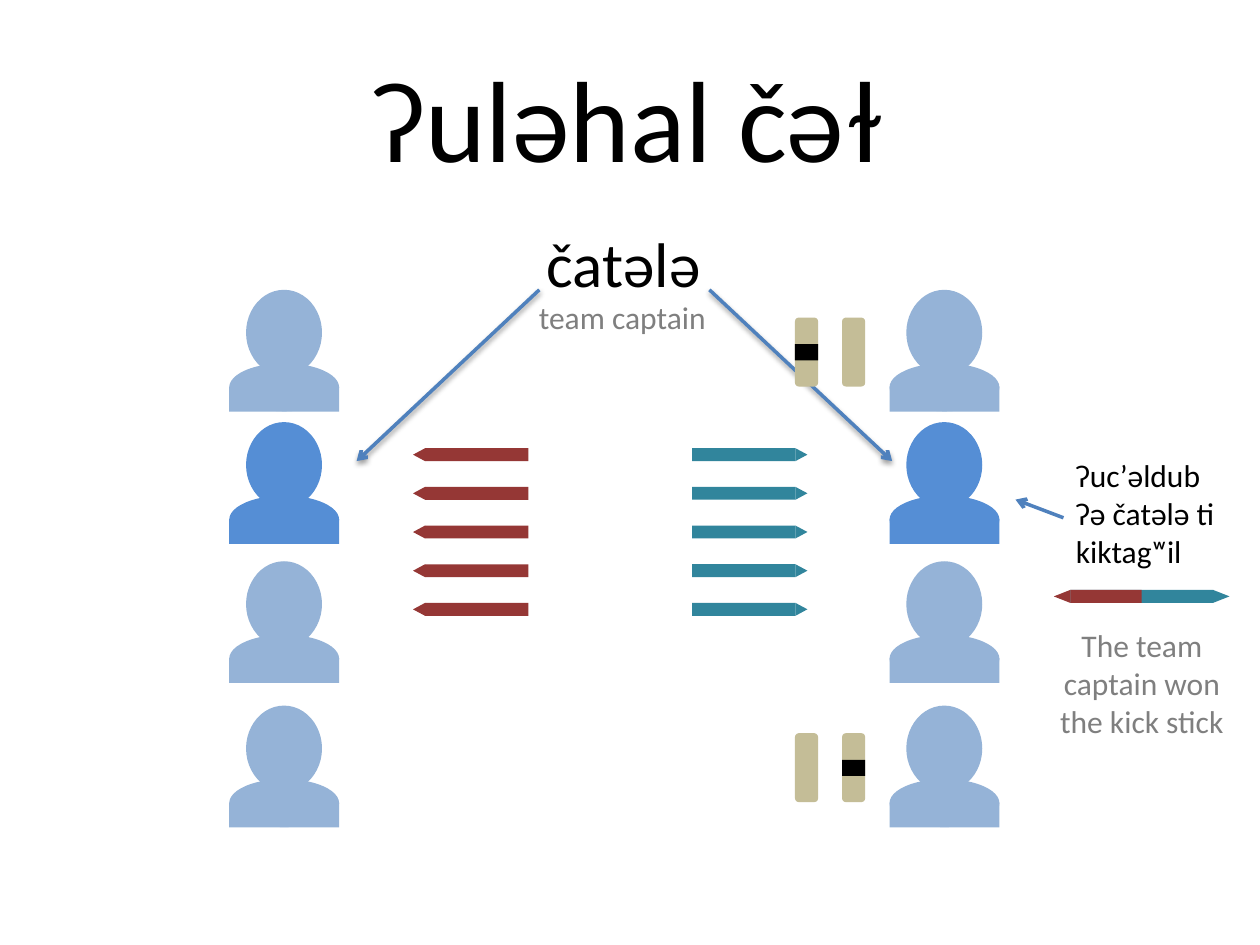
from lxml import etree
from pptx import Presentation
from pptx.dml.color import RGBColor
from pptx.enum.shapes import MSO_CONNECTOR, MSO_SHAPE
from pptx.enum.text import MSO_ANCHOR, PP_ALIGN
from pptx.oxml.ns import qn
from pptx.util import Pt

OVAL, RECT = MSO_SHAPE.OVAL, MSO_SHAPE.RECTANGLE
TRIANGLE, ROUNDED = MSO_SHAPE.ISOSCELES_TRIANGLE, MSO_SHAPE.ROUNDED_RECTANGLE
STRAIGHT = MSO_CONNECTOR.STRAIGHT
LEFT, CENTER = PP_ALIGN.LEFT, PP_ALIGN.CENTER
FONT = "Calibri"
TITLE_ONLY = 5

COLORS = {
    "player": "95B3D7", "captain": "558ED5", "arrow": "4F81BD",
    "red": "953735", "teal": "31859C", "bone": "C4BD97",
    "black": "000000", "gray": "7F7F7F",
}

# Content: lengths in points
TITLE = "ʔuləhal čəɫ"
CAPTAIN = "čatələ"
CAPTAIN_ENGLISH = "team captain"
WON = ["ʔuc’əldub", "ʔə čatələ ti", "kiktagʷil"]
WON_ENGLISH = "The team captain won the kick stick"

TEAM_LEFTS = [131, 508.3]
PLAYERS = [(165.6, "player"), (241.2, "captain"), (320.7, "player"), (403.2, "player")]
PLAYER_PARTS = [  # kind, offset from player corner, size
    (OVAL, 9.6, 0, 43.4, 49),
    (OVAL, 0, 42, 62.8, 27.4),
    (RECT, 0, 55.4, 62.8, 14.2),
]
STICK_COUNT, STICK_TOP, STICK_PITCH = 5, 256.1, 22.1
STICK_HEIGHT, STICK_LENGTH, STICK_TIP = 7.4, 59.1, 6.9
STICK_LEFTS = [("red", 242.9, 270), ("teal", 395.4, 90)]
BONE_LEFTS, BONE_WIDTH, BONE_HEIGHT = [454.3, 481.2], 13.2, 39.4
BAND_OFFSET, BAND_HEIGHT = 15.2, 9.2
BONE_PAIRS = [(419, 1), (181.5, 0)]  # top, index of the banded bone


def color(name):
    return RGBColor.from_string(COLORS[name])


def add_part(shapes, kind, left, top, width, height, fill, turn=0):
    """Add a filled shape whose drawn extent is the box given, even when turned."""
    if turn:
        left, top = left + (width - height) / 2, top + (height - width) / 2
        width, height = height, width
    part = shapes.add_shape(kind, Pt(left), Pt(top), Pt(width), Pt(height))
    part.rotation = turn
    part.shadow.inherit = False
    part.fill.solid()
    part.fill.fore_color.rgb = color(fill)
    part.line.fill.background()
    return part


def write(frame, lines, size=18, fill="black", align=LEFT, wrap=True):
    frame.word_wrap = wrap
    for number, line in enumerate(lines):
        para = frame.paragraphs[0] if number == 0 else frame.add_paragraph()
        para.alignment = align
        span = para.add_run()
        span.text = line
        span.font.name = FONT
        span.font.size = Pt(size)
        span.font.color.rgb = color(fill)


def add_text(shapes, left, top, width, height, lines, **style):
    box = shapes.add_textbox(Pt(left), Pt(top), Pt(width), Pt(height))
    write(box.text_frame, lines, **style)


def add_arrow(shapes, start, end, shadow=False):
    arrow = shapes.add_connector(STRAIGHT, *map(Pt, start + end))
    arrow.line.color.rgb = color("arrow")
    arrow.line.width = Pt(2)
    etree.SubElement(arrow.line._get_or_add_ln(), qn("a:tailEnd"), type="arrow")
    effects = etree.SubElement(arrow._element.spPr, qn("a:effectLst"))
    if shadow:
        outer = etree.SubElement(effects, qn("a:outerShdw"), blurRad=str(Pt(3.1)),
                                 dist=str(Pt(1.6)), dir="5400000", rotWithShape="0")
        shade = etree.SubElement(outer, qn("a:srgbClr"), val=COLORS["black"])
        etree.SubElement(shade, qn("a:alpha"), val="38000")


def add_group(page):
    return page.shapes.add_group_shape().shapes


def add_player(page, left, top, fill):
    group = add_group(page)
    for kind, across, down, width, height in PLAYER_PARTS:
        add_part(group, kind, left + across, top + down, width, height, fill)


def add_stick(page, left, top, fill, turn):
    group = add_group(page)
    tip_left = left + STICK_LENGTH if turn == 90 else left - STICK_TIP
    add_part(group, RECT, left, top, STICK_LENGTH, STICK_HEIGHT, fill, turn)
    add_part(group, TRIANGLE, tip_left, top, STICK_TIP, STICK_HEIGHT, fill, turn)


def add_kick_stick(page, left=611.6, top=337.1, length=81.6, tip=9.4):
    group = add_group(page)
    add_part(group, RECT, left, top, length, STICK_HEIGHT, "teal", 90)
    add_part(group, TRIANGLE, left + length, top, tip, STICK_HEIGHT, "teal", 90)
    add_part(group, TRIANGLE, left - tip, top, tip, STICK_HEIGHT, "red", 270)
    add_part(group, RECT, left, top, length / 2, STICK_HEIGHT, "red", 90)


def add_bones(page, top, banded):
    group = add_group(page)
    for left in BONE_LEFTS:
        add_part(group, ROUNDED, left, top, BONE_WIDTH, BONE_HEIGHT, "bone")
    add_part(group, RECT, BONE_LEFTS[banded], top + BAND_OFFSET,
             BONE_WIDTH, BAND_HEIGHT, "black")


def main():
    deck = Presentation()
    deck.slide_width, deck.slide_height = Pt(720), Pt(540)
    page = deck.slides.add_slide(deck.slide_layouts[TITLE_ONLY])

    # Title
    title = page.shapes.title
    title.left, title.top, title.width, title.height = map(Pt, (36, 21.6, 648, 90))
    title.text_frame.vertical_anchor = MSO_ANCHOR.MIDDLE
    write(title.text_frame, [TITLE], size=66, align=CENTER)

    # Two teams of players
    for left in TEAM_LEFTS:
        for top, fill in PLAYERS:
            add_player(page, left, top, fill)

    # Who won the kick stick
    group = add_group(page)
    add_text(group, 607.7, 257, 95, 72.7, WON, wrap=False)
    add_arrow(group, (607.7, 295.9), (580.3, 285.5))

    # Counting sticks and the kick stick
    for fill, left, turn in STICK_LEFTS:
        for row in range(STICK_COUNT):
            add_stick(page, left, STICK_TOP + row * STICK_PITCH, fill, turn)
    add_kick_stick(page)

    # Captain label pointing at both captains
    group = add_group(page)
    add_text(group, 305.3, 124.6, 103.7, 51, [CAPTAIN], size=36, wrap=False)
    add_arrow(group, (308.2, 165.6), (203.8, 263.5), shadow=True)
    add_arrow(group, (405.4, 165.6), (509.8, 263.5), shadow=True)

    # Bones and English captions
    for top, banded in BONE_PAIRS:
        add_bones(page, top, banded)
    add_text(page.shapes, 296.6, 166.5, 118, 29, [CAPTAIN_ENGLISH],
             fill="gray", align=CENTER)
    add_text(page.shapes, 593.5, 354.4, 118, 72.7, [WON_ENGLISH],
             fill="gray", align=CENTER)

    deck.save("out.pptx")


if __name__ == "__main__":
    main()
